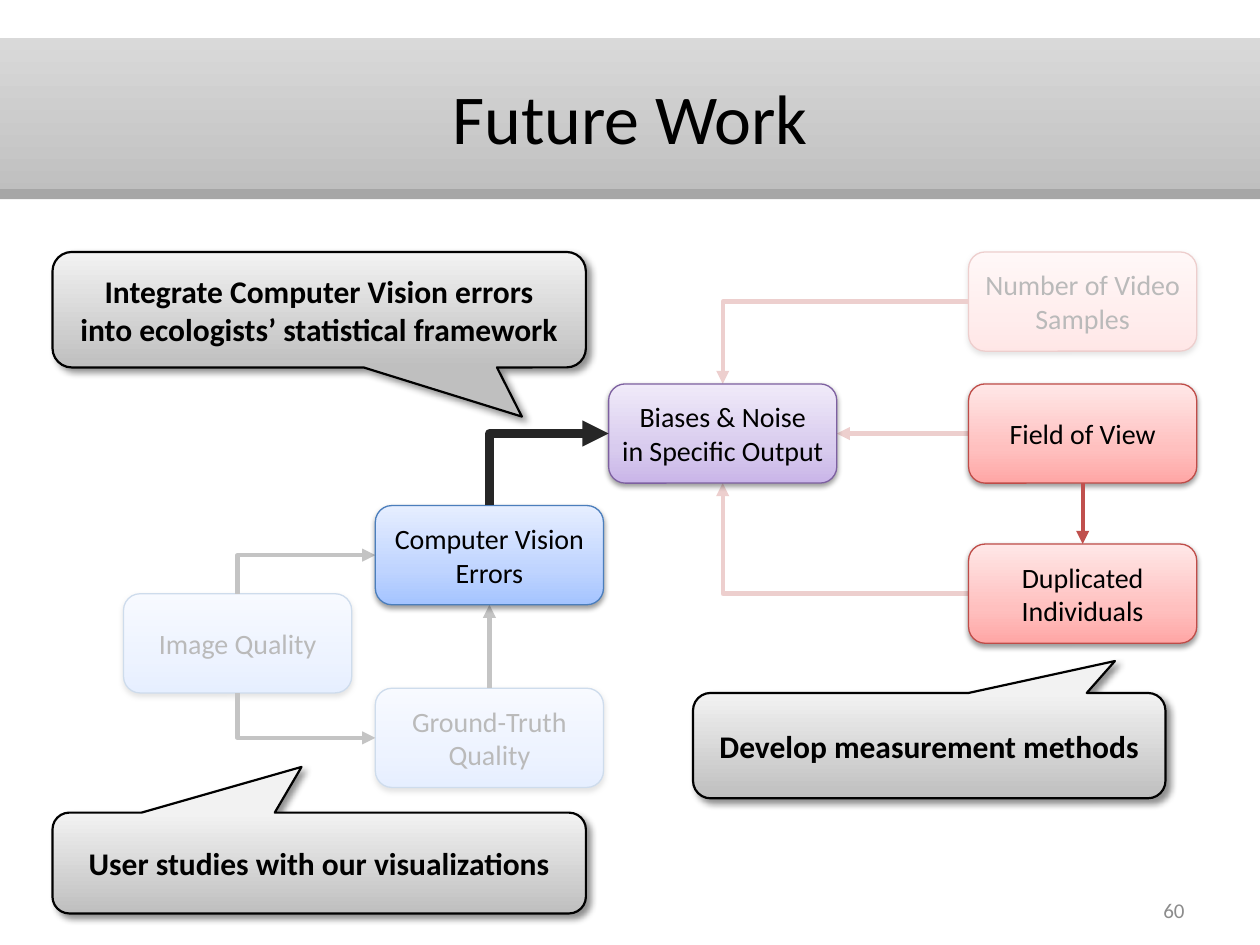
import copy

import pptx
import pptx.dml.color
import pptx.enum.shapes
import pptx.enum.text
import pptx.oxml
import pptx.oxml.ns
import pptx.util

Pt = pptx.util.Pt
qn = pptx.oxml.ns.qn
rgb = pptx.dml.color.RGBColor.from_string
SHAPE = pptx.enum.shapes.MSO_SHAPE
LINK = pptx.enum.shapes.MSO_CONNECTOR
ALIGN = pptx.enum.text.PP_ALIGN
MIDDLE = pptx.enum.text.MSO_ANCHOR.MIDDLE
NS = 'xmlns:a="http://schemas.openxmlformats.org/drawingml/2006/main"'

BOX_W, BOX_H = 130.4, 56.7
SIDES = {"left": (0, 0.5), "right": (1, 0.5), "top": (0.5, 0), "bottom": (0.5, 1)}
RED = ("BF4C48", [(0, "FFA6A5"), (0.35, "FFC0BF"), (1, "FFE7E7")])
BLUE = ("4B7EBC", [(0, "A4C4FF"), (0.35, "BFD4FF"), (1, "E6EEFF")])
PURPLE = ("7D60A0", [(0, "C9B5E8"), (0.35, "D8CBEE"), (1, "F0EAF9")])
GREY = ("000000", [(0, "BFBFBF"), (1, "F2F2F2")])
RED_ARROW, DARK_ARROW = "C0504D", "262626"

# name: (left, top, text lines, style)
boxes = {
    "samples": (553.5, 144, ["Number of Video Samples"], RED),
    "truth": (214.5, 393.3, ["Ground-Truth Quality"], BLUE),
    "image": (70.6, 339.3, ["Image Quality"], BLUE),
    "vision": (214.5, 288.9, ["Computer Vision Errors"], BLUE),
    "biases": (347.8, 219.4, ["Biases & Noise", "in Specific Output"], PURPLE),
    "duplicated": (553.5, 310.9, ["Duplicated Individuals"], RED),
    "view": (553.5, 219.4, ["Field of View"], RED),
}
# start box, side, end box, side, colour, width
faded_arrows = [
    ("view", "left", "biases", "right", RED_ARROW, 2.5),
    ("duplicated", "left", "biases", "bottom", RED_ARROW, 2.5),
    ("truth", "top", "vision", "bottom", DARK_ARROW, 2.5),
    ("image", "bottom", "truth", "left", DARK_ARROW, 2.5),
    ("image", "top", "vision", "left", DARK_ARROW, 2.5),
    ("samples", "left", "biases", "top", RED_ARROW, 2.5),
]
clear_arrows = [
    ("vision", "top", "biases", "left", DARK_ARROW, 5),
    ("view", "bottom", "duplicated", "top", RED_ARROW, 2.5),
]
# left, top, width, height, pointer, text lines
callouts = [
    (30, 144, 304.8, 66, (0.38, 0.926),
     ["Integrate Computer Vision errors", "into ecologists’ statistical framework"]),
    (30, 464.4, 304.8, 57.6, (-0.033, -0.954), ["User studies with our visualizations"]),
    (396, 396, 270, 60.2, (0.393, -0.803), ["Develop measurement methods"]),
]

prs = pptx.Presentation()
prs.slide_width, prs.slide_height = Pt(720), Pt(540)
s = prs.slides.add_slide(prs.slide_layouts[5])


def add_panel(x, y, w, h, lines, style, pointer=None):
    """Add a gradient box, or a callout when a pointer is given."""
    kind = SHAPE.ROUNDED_RECTANGULAR_CALLOUT if pointer else SHAPE.ROUNDED_RECTANGLE
    sp = s.shapes.add_shape(kind, Pt(x), Pt(y), Pt(w), Pt(h))
    line, stops = style
    sp.line.color.rgb = rgb(line)
    sp.line.width = Pt(1.25 if pointer else 0.75)
    sp.fill.gradient()
    sp.fill.gradient_angle = 90
    stop_list = sp.element.spPr.find(qn("a:gradFill")).find(qn("a:gsLst"))
    while len(stop_list) < len(stops):
        stop_list.append(copy.deepcopy(stop_list[0]))
    for stop, (position, colour) in zip(sp.fill.gradient_stops, stops):
        stop.position = position
        stop.color.rgb = rgb(colour)
    blur, dist, angle, alpha = (4, 3, 45, 43) if pointer else (3.1, 1.6, 90, 38)
    sp.element.spPr.append(pptx.oxml.parse_xml(
        f'<a:effectLst {NS}><a:outerShdw blurRad="{Pt(blur)}" dist="{Pt(dist)}" '
        f'dir="{angle * 60000}" algn="ctr" rotWithShape="0"><a:srgbClr val="000000">'
        f'<a:alpha val="{alpha * 1000}"/></a:srgbClr></a:outerShdw></a:effectLst>'))
    tf = sp.text_frame
    tf.vertical_anchor = MIDDLE
    tf.word_wrap = not pointer
    if pointer:
        sp.adjustments[0], sp.adjustments[1] = pointer
    else:
        tf.margin_left = tf.margin_right = tf.margin_top = tf.margin_bottom = 0
    tf.text = "\n".join(lines)
    for p in tf.paragraphs:
        p.alignment = ALIGN.CENTER
        p.font.name = "Calibri"
        p.font.size = Pt(18 if pointer else 16)
        p.font.bold = bool(pointer)
        p.font.color.rgb = rgb("000000")


def add_arrow(start, start_side, end, end_side, colour, width):
    """Join two boxes by a straight arrow, or by one with a single bend."""
    (x1, y1), (x2, y2) = [
        (boxes[name][0] + SIDES[side][0] * BOX_W, boxes[name][1] + SIDES[side][1] * BOX_H)
        for name, side in ((start, start_side), (end, end_side))]
    straight = x1 == x2 or y1 == y2
    turn = 0
    if not straight and start_side in ("top", "bottom"):
        # The preset leaves sideways, so a vertical start is a quarter turn.
        turn = 1 if y2 < y1 else -1
        cx, cy = (x1 + x2) / 2, (y1 + y2) / 2
        half_w, half_h = abs(y2 - y1) / 2, turn * abs(x2 - x1) / 2
        x1, y1, x2, y2 = cx + half_w, cy + half_h, cx - half_w, cy - half_h
    c = s.shapes.add_connector(LINK.STRAIGHT if straight else LINK.ELBOW,
                               Pt(x1), Pt(y1), Pt(x2), Pt(y2))
    spPr = c.element.spPr
    if not straight:
        spPr.find(qn("a:prstGeom")).set("prst", "bentConnector2")
    if turn:
        spPr.find(qn("a:xfrm")).set("rot", str(turn * 90 % 360 * 60000))
    c.line.color.rgb = rgb(colour)
    c.line.width = Pt(width)
    spPr.find(qn("a:ln")).append(pptx.oxml.parse_xml(f'<a:tailEnd {NS} type="triangle"/>'))
    spPr.append(pptx.oxml.parse_xml(f"<a:effectLst {NS}/>"))


# Header band with the title on it
band = s.shapes.add_shape(SHAPE.RECTANGLE, 0, Pt(21.6), Pt(720), Pt(90))
band.fill.gradient()
band.fill.gradient_angle = 90
for stop, colour in zip(band.fill.gradient_stops, ("BFBFBF", "D9D9D9")):
    stop.color.rgb = rgb(colour)
rule = s.shapes.add_shape(SHAPE.RECTANGLE, 0, Pt(108), Pt(720), Pt(5.8))
rule.fill.solid()
rule.fill.fore_color.rgb = rgb("A6A6A6")

title = s.shapes.title
s.shapes.element.append(title.element)
title.left, title.top, title.width, title.height = 0, Pt(21.6), Pt(720), Pt(90)
number = s.shapes.add_textbox(Pt(516), Pt(505.5), Pt(168), Pt(28.8))
for sp, text, size, colour, align in (
        (title, "Future Work", 40, "000000", ALIGN.CENTER),
        (number, "60", 12, "8C8C8C", ALIGN.RIGHT)):
    tf = sp.text_frame
    tf.text = text
    tf.word_wrap = True
    tf.vertical_anchor = MIDDLE
    p = tf.paragraphs[0]
    p.alignment = align
    p.font.name = "Calibri"
    p.font.size = Pt(size)
    p.font.color.rgb = rgb(colour)

# Faded part of the diagram, under a translucent veil
for name in ("samples", "truth", "image"):
    x, y, lines, style = boxes[name]
    add_panel(x, y, BOX_W, BOX_H, lines, style)
for arrow in faded_arrows:
    add_arrow(*arrow)
veil = s.shapes.add_shape(SHAPE.RECTANGLE, Pt(66), Pt(126), Pt(636), Pt(342))
veil.fill.solid()
veil.fill.fore_color.rgb = rgb("FFFFFF")
veil.element.spPr.find(qn("a:solidFill"))[0].append(
    pptx.oxml.parse_xml(f'<a:alpha {NS} val="73000"/>'))
for sp in (band, rule, veil):
    sp.line.fill.background()
    sp.shadow.inherit = False

# Highlighted part and its callouts
for name in ("vision", "biases", "duplicated", "view"):
    x, y, lines, style = boxes[name]
    add_panel(x, y, BOX_W, BOX_H, lines, style)
for arrow in clear_arrows:
    add_arrow(*arrow)
for x, y, w, h, pointer, lines in callouts:
    add_panel(x, y, w, h, lines, GREY, pointer)

prs.save("out.pptx")
